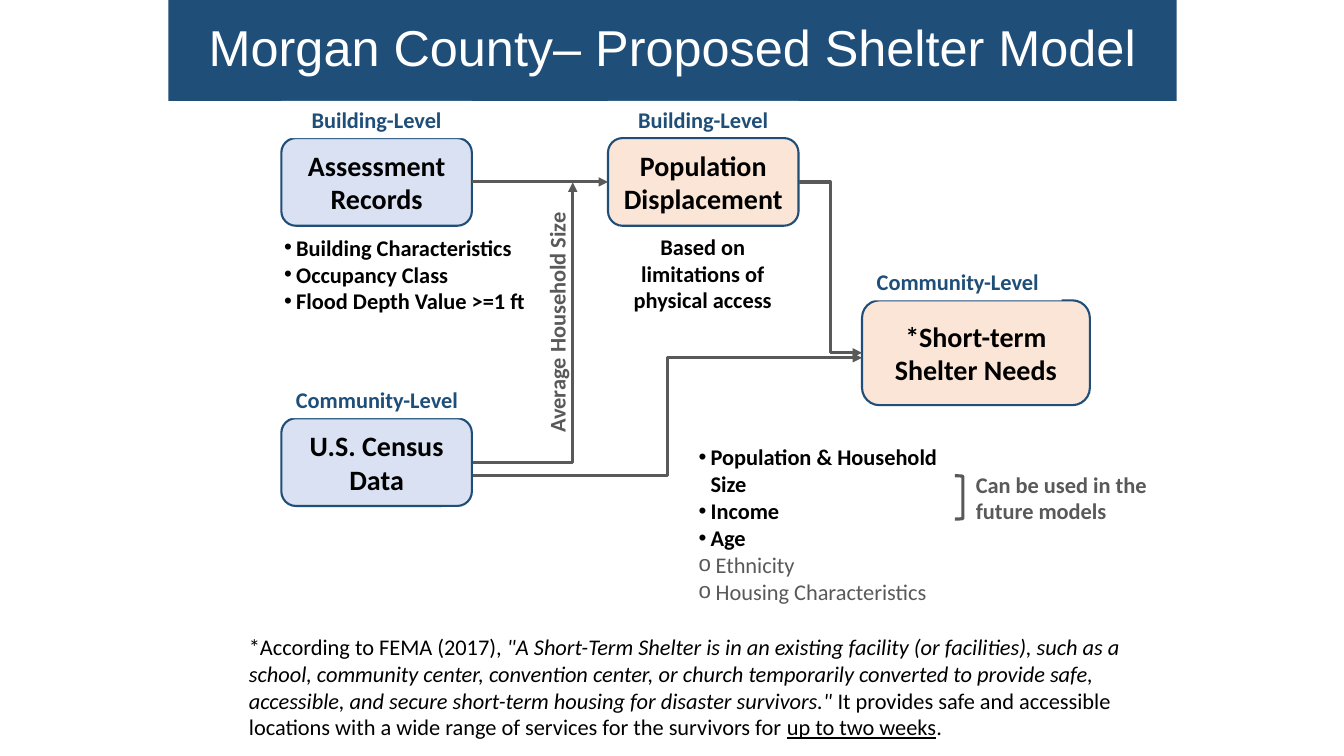
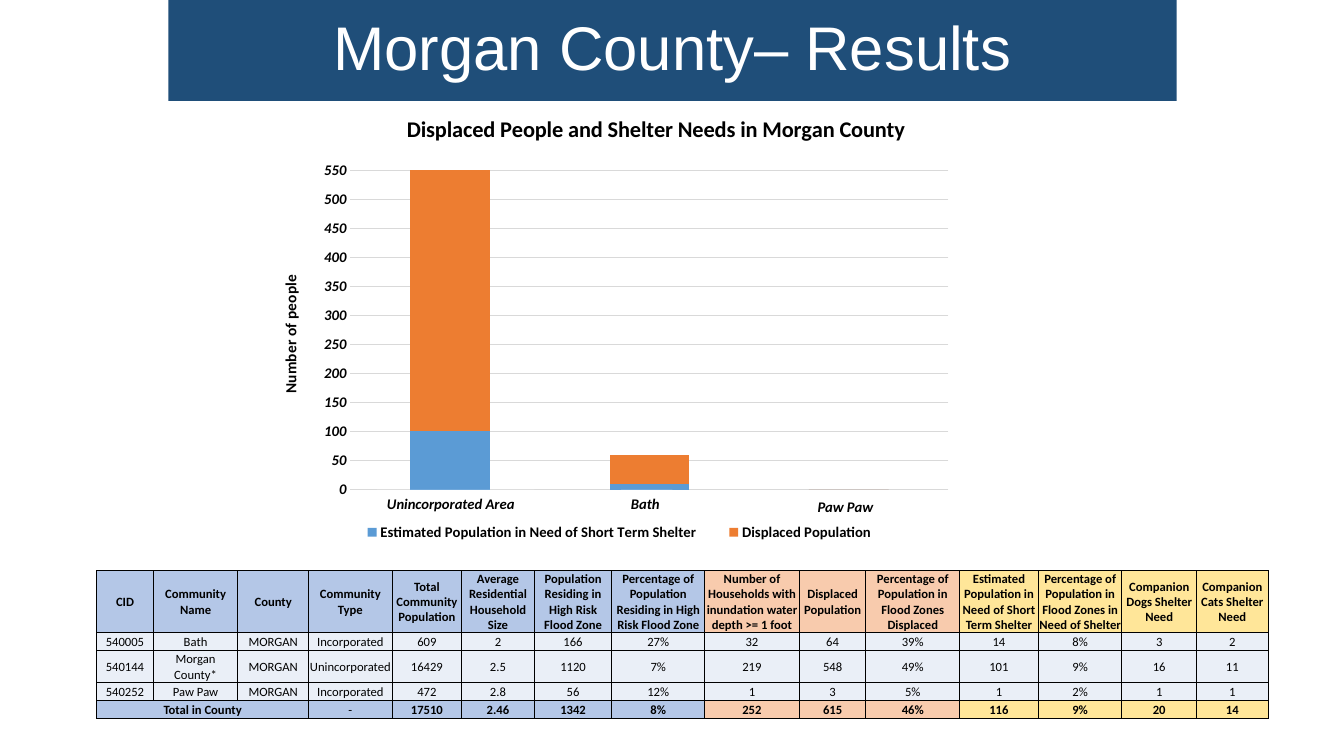
from pptx import Presentation
from pptx.chart.data import CategoryChartData
from pptx.dml.color import RGBColor
from pptx.enum.chart import XL_CHART_TYPE, XL_LEGEND_POSITION, XL_TICK_LABEL_POSITION, XL_TICK_MARK
from pptx.enum.shapes import MSO_CONNECTOR, MSO_SHAPE
from pptx.enum.text import MSO_ANCHOR, MSO_AUTO_SIZE, PP_ALIGN
from pptx.oxml.ns import qn
from pptx.util import Inches, Pt
from lxml.etree import SubElement

BLACK = RGBColor(0x00, 0x00, 0x00)
WHITE = RGBColor(0xFF, 0xFF, 0xFF)
GRAY = RGBColor(0x59, 0x59, 0x59)
NAVY = RGBColor(0x1F, 0x4E, 0x79)
INPUT_BLUE = RGBColor(0xD9, 0xE1, 0xF2)
RESULT_PEACH = RGBColor(0xFB, 0xE5, 0xD6)
GRID_GRAY = RGBColor(0xD9, 0xD9, 0xD9)
SERIES_BLUE = RGBColor(0x5B, 0x9B, 0xD5)
SERIES_ORANGE = RGBColor(0xED, 0x7D, 0x31)
HEAD_BLUE = RGBColor(0xB4, 0xC7, 0xE7)
HEAD_ORANGE = RGBColor(0xF8, 0xCB, 0xAD)
HEAD_YELLOW = RGBColor(0xFF, 0xE6, 0x99)
ROW_BLUE = RGBColor(0xEA, 0xEF, 0xF7)

COLUMN_WIDTHS = [0.56, 0.84, 0.7, 0.83, 0.69, 0.72, 0.77, 0.92, 0.94, 0.66, 0.93, 0.78, 0.83, 0.74, 0.71]
ROW_HEIGHTS = [0.56, 0.18, 0.26, 0.18, 0.18]
COLUMN_COLORS = [HEAD_BLUE] * 8 + [HEAD_ORANGE] * 3 + [HEAD_YELLOW] * 4
TABLE_ROWS = [
    ["CID", "Community Name", "County", "Community Type", "Total Community Population",
     "Average Residential Household Size", "Population Residing in High Risk Flood Zone",
     "Percentage of Population Residing in High Risk Flood Zone",
     "Number of Households with inundation water depth >= 1 foot", "Displaced Population",
     "Percentage of Population in Flood Zones Displaced",
     "Estimated Population in Need of Short Term Shelter",
     "Percentage of Population in Flood Zones in Need of Shelter",
     "Companion Dogs Shelter Need", "Companion Cats Shelter Need"],
    ["540005", "Bath", "MORGAN", "Incorporated", "609", "2", "166", "27%",
     "32", "64", "39%", "14", "8%", "3", "2"],
    ["540144", "Morgan County*", "MORGAN", "Unincorporated", "16429", "2.5", "1120", "7%",
     "219", "548", "49%", "101", "9%", "16", "11"],
    ["540252", "Paw Paw", "MORGAN", "Incorporated", "472", "2.8", "56", "12%",
     "1", "3", "5%", "1", "2%", "1", "1"],
    ["Total in County", "", "", "-", "17510", "2.46", "1342", "8%",
     "252", "615", "46%", "116", "9%", "20", "14"],
]


def style_font(font, size=16, color=BLACK, bold=False, italic=False, underline=False, name="Calibri"):
    font.size = Pt(size)
    font.color.rgb = color
    font.bold = bold
    font.italic = italic
    font.underline = underline
    font.name = name


def write_text(paragraph, text, align=None, **style):
    run = paragraph.add_run()
    run.text = text
    style_font(run.font, **style)
    if align is not None:
        paragraph.alignment = align


def set_bullet(paragraph, character, indent):
    properties = paragraph._p.get_or_add_pPr()
    properties.set("marL", str(Inches(indent)))
    properties.set("indent", str(-Inches(indent)))
    SubElement(properties, qn("a:buFont"), typeface="Arial")
    SubElement(properties, qn("a:buChar"), char=character)


def set_chart_layout(element, position, **fractions):
    for layout in element.findall(qn("c:layout")):
        element.remove(layout)
    layout = SubElement(element, qn("c:layout"))
    element.insert(position, layout)
    manual = SubElement(layout, qn("c:manualLayout"))
    for name, value in fractions.items():
        SubElement(manual, qn("c:" + name), val=str(value))


class Deck:
    def __init__(self):
        self.presentation = Presentation()
        self.presentation.slide_width = Inches(13.33)
        self.presentation.slide_height = Inches(7.5)
        self.slide = None

    def add_slide(self, title, size):
        self.slide = self.presentation.slides.add_slide(self.presentation.slide_layouts[5])
        shape = self.slide.shapes.title
        shape.left, shape.top, shape.width, shape.height = Inches(1.67), Inches(0), Inches(10), Inches(1)
        shape.fill.solid()
        shape.fill.fore_color.rgb = NAVY
        frame = shape.text_frame
        frame.auto_size = MSO_AUTO_SIZE.NONE
        frame.vertical_anchor = MSO_ANCHOR.MIDDLE
        paragraph = frame.paragraphs[0]
        paragraph.line_spacing = 0.9
        write_text(paragraph, title, PP_ALIGN.CENTER, size=size, color=WHITE, name="Arial")

    def box(self, left, top, width, height, lines, fill):
        shape = self.slide.shapes.add_shape(
            MSO_SHAPE.ROUNDED_RECTANGLE, Inches(left), Inches(top), Inches(width), Inches(height))
        shape.shadow.inherit = False
        shape.fill.solid()
        shape.fill.fore_color.rgb = fill
        shape.line.color.rgb = NAVY
        shape.line.width = Pt(1.5)
        frame = shape.text_frame
        frame.vertical_anchor = MSO_ANCHOR.MIDDLE
        for index, line in enumerate(lines):
            paragraph = frame.add_paragraph() if index else frame.paragraphs[0]
            write_text(paragraph, line, PP_ALIGN.CENTER, size=20, bold=True)
        return shape

    def text_box(self, left, top, width, height, fill=WHITE, auto_size=MSO_AUTO_SIZE.SHAPE_TO_FIT_TEXT):
        shape = self.slide.shapes.add_textbox(Inches(left), Inches(top), Inches(width), Inches(height))
        if fill is not None:
            shape.fill.solid()
            shape.fill.fore_color.rgb = fill
        shape.text_frame.word_wrap = True
        shape.text_frame.auto_size = auto_size
        return shape

    def label(self, left, top, width, height, text, color=NAVY, align=PP_ALIGN.CENTER, rotation=0):
        shape = self.text_box(left, top, width, height)
        shape.rotation = rotation
        write_text(shape.text_frame.paragraphs[0], text, align, color=color, bold=True)

    def category_label(self, left, top, width, height, text):
        shape = self.text_box(left, top, width, height, auto_size=MSO_AUTO_SIZE.NONE)
        write_text(shape.text_frame.paragraphs[0], text, size=10.5, bold=True, italic=True)

    def bullet_list(self, left, top, width, height, items, open_items=()):
        frame = self.text_box(left, top, width, height).text_frame
        for index, item in enumerate([*items, *open_items]):
            paragraph = frame.add_paragraph() if index else frame.paragraphs[0]
            is_open = index >= len(items)
            set_bullet(paragraph, "o" if is_open else "•", 0.17 if is_open else 0.12)
            write_text(paragraph, item, color=GRAY if is_open else BLACK, bold=not is_open)

    def rich_text(self, left, top, width, height, runs):
        paragraph = self.text_box(left, top, width, height, fill=None).text_frame.paragraphs[0]
        for text, style in runs:
            write_text(paragraph, text, **style)

    def arrow(self, start, end, kind=MSO_CONNECTOR.ELBOW, source=None, target=None, single_bend=False):
        connector = self.slide.shapes.add_connector(kind, *map(Inches, start + end))
        if source is not None:
            connector.begin_connect(source, 3)
            connector.end_connect(target, 1)
        connector.line.color.rgb = GRAY
        connector.line.width = Pt(2.25)
        properties = connector.element.spPr
        SubElement(properties.find(qn("a:ln")), qn("a:tailEnd"), type="triangle")
        SubElement(properties, qn("a:effectLst"))
        if single_bend:
            properties.find(qn("a:prstGeom")).set("prst", "bentConnector2")

    def bracket(self, left, top, width, height):
        shape = self.slide.shapes.add_shape(
            MSO_SHAPE.RIGHT_BRACKET, Inches(left), Inches(top), Inches(width), Inches(height))
        shape.shadow.inherit = False
        shape.fill.background()
        shape.line.color.rgb = GRAY
        shape.line.width = Pt(2.25)

    def stacked_chart(self, left, top, width, height, title, axis_title, categories, series):
        data = CategoryChartData()
        data.categories = categories
        for name, values, color in series:
            data.add_series(name, values)
        chart = self.slide.shapes.add_chart(
            XL_CHART_TYPE.COLUMN_STACKED, Inches(left), Inches(top), Inches(width), Inches(height), data).chart
        style_font(chart.font, size=10)
        chart.has_title = True
        write_text(chart.chart_title.text_frame.paragraphs[0], title, size=16, bold=True)
        set_chart_layout(chart.chart_title.element, 1, xMode="edge", yMode="edge", x=0.2, y=0.02)
        chart.has_legend = True
        chart.legend.position = XL_LEGEND_POSITION.BOTTOM
        chart.legend.include_in_layout = False
        style_font(chart.legend.font, size=10.5, bold=True)
        set_chart_layout(chart.legend._element, 1, xMode="edge", yMode="edge", x=0.11, y=0.93, w=0.8, h=0.06)

        plot = chart.plots[0]
        plot.gap_width, plot.overlap, plot.vary_by_categories = 150, 100, False
        for bars, (name, values, color) in zip(plot.series, series):
            bars.format.fill.solid()
            bars.format.fill.fore_color.rgb = color

        for axis in (chart.category_axis, chart.value_axis):
            axis.major_tick_mark = axis.minor_tick_mark = XL_TICK_MARK.NONE
        chart.category_axis.tick_label_position = XL_TICK_LABEL_POSITION.NONE
        chart.category_axis.format.line.color.rgb = GRID_GRAY
        value_axis = chart.value_axis
        style_font(value_axis.tick_labels.font, size=10.5, bold=True, italic=True)
        value_axis.minimum_scale, value_axis.maximum_scale, value_axis.major_unit = 0, 550, 50
        value_axis.format.line.fill.background()
        value_axis.major_gridlines.format.line.color.rgb = GRID_GRAY
        value_axis.major_gridlines.format.line.width = Pt(0.75)
        write_text(value_axis.axis_title.text_frame.paragraphs[0], axis_title, size=11, bold=True)
        for body in chart.element.xpath("//c:valAx/c:title//a:bodyPr"):
            body.set("rot", "-5400000")
            body.set("vert", "horz")
        set_chart_layout(value_axis.axis_title.element, 1, xMode="edge", yMode="edge", x=0.02, y=0.38)
        set_chart_layout(chart.element.xpath("//c:plotArea")[0], 0, layoutTarget="inner",
                         xMode="edge", yMode="edge", x=0.125, y=0.155, w=0.856, h=0.71)

    def cell(self, cell, text, fill, bold):
        cell.fill.solid()
        cell.fill.fore_color.rgb = fill
        cell.margin_left = cell.margin_right = cell.margin_top = Inches(0.01)
        cell.margin_bottom = Inches(0)
        cell.vertical_anchor = MSO_ANCHOR.MIDDLE
        if text:
            write_text(cell.text_frame.paragraphs[0], text, PP_ALIGN.CENTER, size=9, bold=bold)
        properties = cell._tc.get_or_add_tcPr()
        for position, side in enumerate(("lnL", "lnR", "lnT", "lnB")):
            border = SubElement(properties, qn("a:" + side), w=str(Pt(0.75)))
            solid = SubElement(border, qn("a:solidFill"))
            SubElement(solid, qn("a:srgbClr"), val=str(BLACK))
            properties.insert(position, border)

    def table(self, left, top, rows, widths, heights, colors):
        table = self.slide.shapes.add_table(
            len(rows), len(widths), Inches(left), Inches(top), Inches(sum(widths)), Inches(sum(heights))).table
        table.first_row = table.horz_banding = False
        for column, width in zip(table.columns, widths):
            column.width = Inches(width)
        for row, height in zip(table.rows, heights):
            row.height = Inches(height)
        last = len(rows) - 1
        for row_index, row in enumerate(rows):
            emphasized = row_index in (0, last)
            for column_index, text in enumerate(row):
                fill = colors[column_index] if emphasized else ROW_BLUE
                self.cell(table.cell(row_index, column_index), text, fill, emphasized and text != "-")
        table.cell(last, 0).merge(table.cell(last, 2))


def build_model(deck):
    deck.add_slide("Morgan County– Proposed Shelter Model", 36)
    deck.label(4.26, 2.94, 2.53, 0.37, "Average Household Size", GRAY, PP_ALIGN.LEFT, 270)
    records = deck.box(2.79, 1.37, 1.89, 0.87, ["Assessment Records"], INPUT_BLUE)
    deck.box(2.79, 4.15, 1.89, 0.87, ["U.S. Census Data"], INPUT_BLUE)
    shelter = deck.box(8.55, 2.98, 2.26, 1.04, ["*Short-term Shelter Needs"], RESULT_PEACH)
    for left in (2.79, 6.03):
        deck.label(left, 1, 1.89, 0.37, "Building-Level")
    for left, top in ((2.71, 3.78), (8.47, 2.61)):
        deck.label(left, top, 2.06, 0.37, "Community-Level")
    displacement = deck.box(6.03, 1.37, 1.89, 0.87, ["Population", "Displacement"], RESULT_PEACH)
    deck.bullet_list(2.72, 2.27, 2.66, 0.91,
                     ["Building Characteristics", "Occupancy Class", "Flood Depth Value >=1 ft"])
    deck.bullet_list(6.83, 4.35, 2.83, 1.72, ["Population & Household Size", "Income", "Age"],
                     ["Ethnicity", "Housing Characteristics"])
    deck.arrow((4.69, 1.81), (6.03, 1.81), MSO_CONNECTOR.STRAIGHT, records, displacement)
    deck.arrow((4.69, 4.59), (5.68, 1.81), single_bend=True)
    deck.arrow((7.92, 1.81), (8.55, 3.5), source=displacement, target=shelter)
    deck.arrow((4.69, 4.72), (8.55, 3.55))
    deck.bracket(9.47, 4.72, 0.08, 0.43)
    deck.label(9.58, 4.62, 2.09, 0.66, "Can be used in the future models", GRAY, PP_ALIGN.LEFT)
    deck.label(5.98, 2.26, 1.98, 0.91, "Based on limitations of physical access", BLACK)
    deck.rich_text(2.37, 6.23, 8.88, 1.18, [
        ("*According to FEMA (2017), ", {}),
        ('"A Short-Term Shelter is in an existing facility (or facilities), such as a school, community '
         'center, convention center, or church temporarily converted to provide safe, accessible, and '
         'secure short-term housing for disaster survivors."', {"italic": True}),
        (" It provides safe and accessible locations with a wide range of services for the survivors for ", {}),
        ("up to two weeks", {"underline": True}),
        (".", {}),
    ])


def build_results(deck):
    deck.add_slide("Morgan County– Results", 44)
    communities = ["Unincorporated Area", "Bath", "Paw Paw"]
    deck.stacked_chart(
        2.61, 1, 6.93, 4.46, "Displaced People and Shelter Needs in Morgan County", "Number of people",
        communities,
        [("Estimated Population in Need of Short Term Shelter", [100, 10, 0], SERIES_BLUE),
         ("Displaced Population", [450, 50, 0], SERIES_ORANGE)])
    places = [(3.74, 4.86, 1.56, 0.34), (6.16, 4.86, 0.51, 0.23), (8.01, 4.89, 0.91, 0.23)]
    for place, community in zip(places, communities):
        deck.category_label(*place, community)
    deck.table(0.96, 5.66, TABLE_ROWS, COLUMN_WIDTHS, ROW_HEIGHTS, COLUMN_COLORS)


def main():
    deck = Deck()
    build_model(deck)
    build_results(deck)
    deck.presentation.save("out.pptx")


if __name__ == "__main__":
    main()
